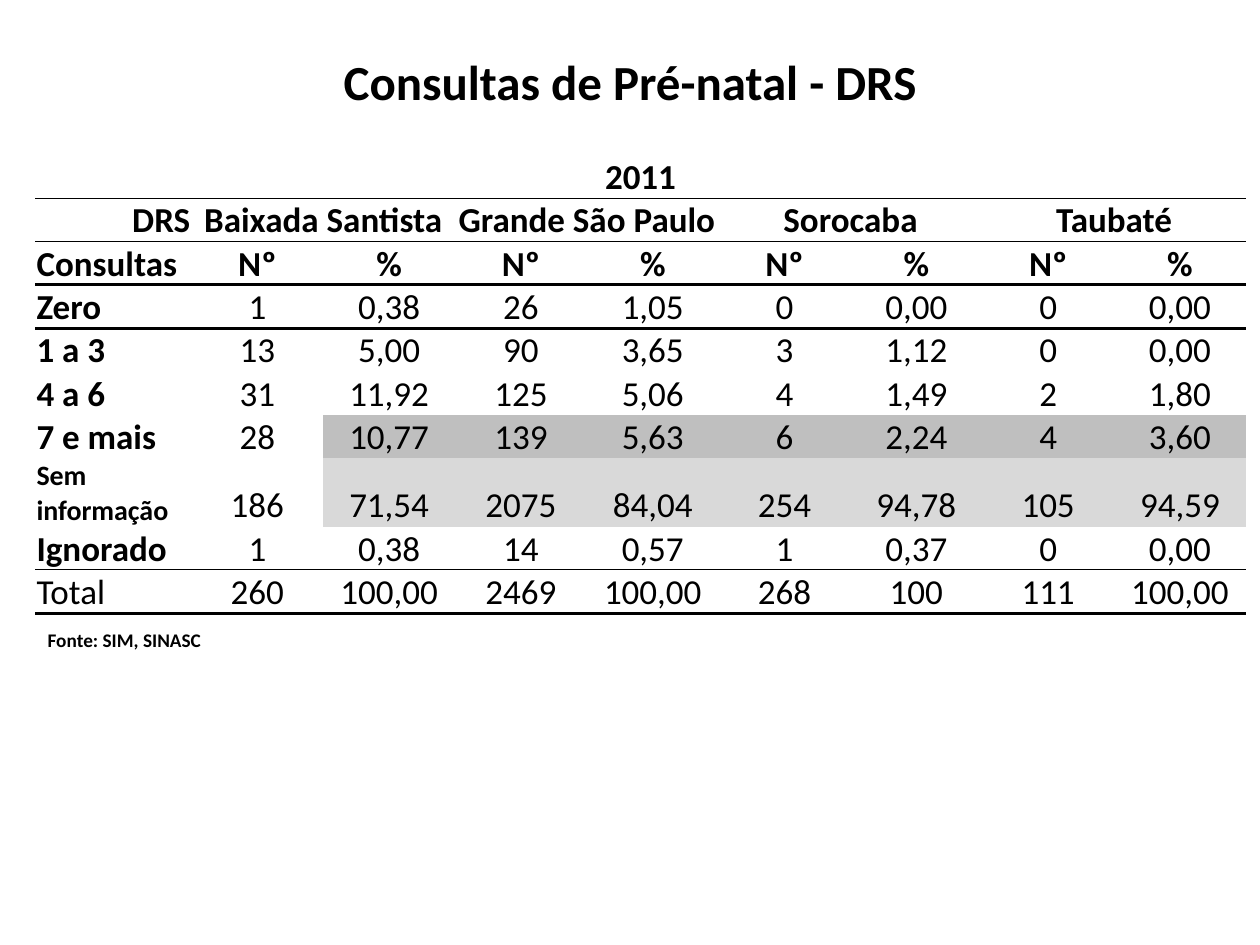
from pptx import Presentation
from pptx.dml.color import RGBColor
from pptx.enum import text
from pptx.oxml import parse_xml
from pptx.oxml.ns import nsdecls, qn
from pptx.util import Inches, Pt

BLACK = RGBColor(0x00, 0x00, 0x00)
MID_GREY = RGBColor(0xBF, 0xBF, 0xBF)
LIGHT_GREY = RGBColor(0xD9, 0xD9, 0xD9)
FONT = "Calibri"
PLAIN_TABLE_STYLE = "{2D5ABB26-0587-4C30-8999-92F81FD0307C}"

YEAR = "2011"
REGIONS = ["Baixada Santista", "Grande São Paulo", "Sorocaba", "Taubaté"]
VISITS = [
    ["Zero", "1", "0,38", "26", "1,05", "0", "0,00", "0", "0,00"],
    ["1 a 3", "13", "5,00", "90", "3,65", "3", "1,12", "0", "0,00"],
    ["4 a 6", "31", "11,92", "125", "5,06", "4", "1,49", "2", "1,80"],
    ["7 e mais", "28", "10,77", "139", "5,63", "6", "2,24", "4", "3,60"],
    ["Sem informação", "186", "71,54", "2075", "84,04", "254", "94,78", "105", "94,59"],
    ["Ignorado", "1", "0,38", "14", "0,57", "1", "0,37", "0", "0,00"],
    ["Total", "260", "100,00", "2469", "100,00", "268", "100", "111", "100,00"],
]
HEADER_ROWS = 3
RULES_BELOW = {0: 0.5, 2: 2, 8: 0.5, 9: 2}
ROW_FILLS = {6: MID_GREY, 7: LIGHT_GREY}
FIRST_FILLED_COLUMN = 2


def add_span(para, words, size, bold):
    span = para.add_run()
    span.text = words
    span.font.name = FONT
    span.font.size = Pt(size)
    span.font.bold = bold
    span.font.color.rgb = BLACK


def add_text(page, words, place, size, align, anchor, wrap):
    box = page.shapes.add_textbox(*(Inches(length) for length in place))
    frame = box.text_frame
    frame.word_wrap = wrap
    frame.vertical_anchor = anchor
    para = frame.paragraphs[0]
    para.alignment = align
    add_span(para, words, size, True)


def set_border(cell, side, width):
    line = parse_xml(
        f'<a:{side} {nsdecls("a")} w="{Pt(width)}"><a:solidFill>'
        f'<a:srgbClr val="{BLACK}"/></a:solidFill></a:{side}>'
    )
    cell._tc.get_or_add_tcPr().insert(0, line)


def style_cell(cell, row, column):
    cell.margin_left = cell.margin_right = cell.margin_top = Inches(0.01)
    cell.margin_bottom = 0
    centred = row in (1, 2) and column > 0
    cell.vertical_anchor = text.MSO_ANCHOR.MIDDLE if centred else text.MSO_ANCHOR.BOTTOM
    if row in ROW_FILLS and column >= FIRST_FILLED_COLUMN:
        cell.fill.solid()
        cell.fill.fore_color.rgb = ROW_FILLS[row]
    else:
        cell.fill.background()
    for side, rule in (("lnB", row), ("lnT", row - 1)):
        if rule in RULES_BELOW:
            set_border(cell, side, RULES_BELOW[rule])


def write_cell(cell, words, row, column, last_row):
    para = cell.text_frame.paragraphs[0]
    if (row, column) == (1, 0):
        para.alignment = text.PP_ALIGN.RIGHT
    elif row == 0 or column > 0:
        para.alignment = text.PP_ALIGN.CENTER
    else:
        para.alignment = text.PP_ALIGN.LEFT
    bold = row < HEADER_ROWS or (column == 0 and row < last_row)
    add_span(para, words, 16 if words == "Sem informação" else 20, bold)


def add_visits_table(page):
    region_cells = [name for region in REGIONS for name in (region, "")]
    rows = [
        [YEAR] + [""] * len(region_cells),
        ["DRS"] + region_cells,
        ["Consultas"] + ["Nº", "%"] * len(REGIONS),
    ] + VISITS
    width, label_width, row_height = Inches(9.61), Inches(1.24), Inches(0.21)
    count = len(rows[0])
    table = page.shapes.add_table(
        len(rows), count, Inches(0.28), Inches(1.23), width, row_height * len(rows)
    ).table
    table.first_row = table.horz_banding = False
    table._tbl.tblPr.find(qn("a:tableStyleId")).text = PLAIN_TABLE_STYLE
    for index, column in enumerate(table.columns):
        column.width = label_width if index == 0 else (width - label_width) // (count - 1)

    table.cell(0, 0).merge(table.cell(0, count - 1))
    for column in range(1, count, 2):
        table.cell(1, column).merge(table.cell(1, column + 1))

    for row, values in enumerate(rows):
        table.rows[row].height = row_height
        for column, words in enumerate(values):
            cell = table.cell(row, column)
            style_cell(cell, row, column)
            if words:
                write_cell(cell, words, row, column, len(rows) - 1)


def main():
    deck = Presentation()
    deck.slide_width, deck.slide_height = Inches(10), Inches(7.5)
    page = deck.slides.add_slide(deck.slide_layouts[6])
    add_text(page, "Consultas de Pré-natal - DRS", (0.5, 0.3, 9, 0.69), 28,
             text.PP_ALIGN.CENTER, text.MSO_ANCHOR.MIDDLE, True)
    add_text(page, "Fonte: SIM, SINASC", (0.28, 4.94, 1.43, 0.29), 11,
             text.PP_ALIGN.LEFT, text.MSO_ANCHOR.TOP, False)
    add_visits_table(page)
    deck.save("out.pptx")


if __name__ == "__main__":
    main()
